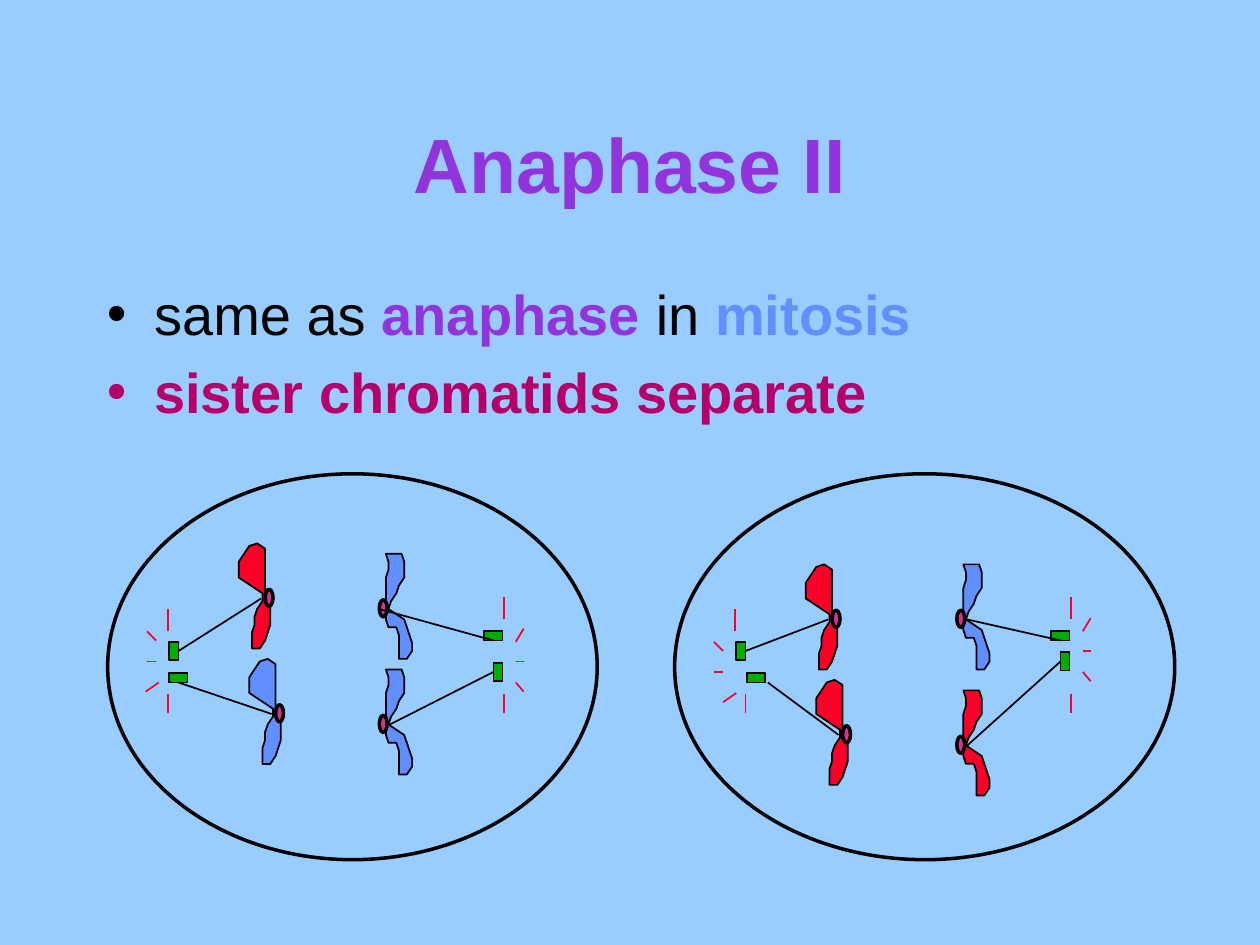
from lxml import etree
from pptx import Presentation
from pptx import util as u
from pptx.dml import color
from pptx.enum import shapes, text
from pptx.oxml import ns

PX = 9525
BLACK, RED, BLUE, GREEN = "000000", "FC0128", "618FFD", "00AE00"
PURPLE, PINK, WINE, SKY = "9234DB", "D93192", "B50069", "99CCFF"

LEFT = [
    (26, 42), (20, 40), (20, 34), (20, 28), (20, 22), (20, 16), (20, 10), (20, 4),
    (14, 0), (8, 2), (4, 8), (0, 14), (0, 20), (0, 26), (6, 30), (12, 34),
    (18, 38), (18, 44), (14, 50), (12, 56), (12, 62), (10, 68), (10, 74), (10, 80),
    (16, 80), (20, 74), (22, 68), (24, 62), (24, 56), (24, 50), (24, 44),
]
RIGHT = [
    (2, 42), (0, 36), (0, 30), (0, 24), (0, 18), (2, 12), (2, 6), (0, 0),
    (6, 0), (12, 0), (14, 6), (14, 12), (14, 18), (10, 24), (8, 30), (4, 36),
    (2, 42), (8, 46), (14, 50), (16, 56), (18, 62), (20, 68), (20, 74), (16, 80),
    (10, 80), (10, 74), (10, 68), (10, 62), (8, 56), (2, 56), (0, 50), (0, 44),
]


def rgb(code):
    return color.RGBColor.from_string(code)


def scale(*vals):
    return [v * PX for v in vals]


def apply(item, form):
    for key, val in form.items():
        setattr(item, key, val)


def paint(shape, fill, width):
    shape.shadow.inherit = False
    if fill:
        shape.fill.solid()
        shape.fill.fore_color.rgb = rgb(fill)
    else:
        shape.fill.background()
    shape.line.color.rgb = rgb(BLACK)
    shape.line.width = u.Pt(width)
    return shape


def block(slide, kind, box, fill, width=1):
    return paint(slide.shapes.add_shape(kind, *scale(*box)), fill, width)


def line(slide, start, end, tone):
    wire = slide.shapes.add_connector(
        shapes.MSO_CONNECTOR.STRAIGHT, *scale(*start, *end))
    wire.line.color.rgb = rgb(tone)
    wire.line.width = u.Pt(1)
    etree.SubElement(wire._element.spPr, ns.qn("a:effectLst"))
    return wire


def strand(slide, left, top, points, fill):
    spots = [(left + x, top + y) for x, y in points]
    pen = slide.shapes.build_freeform(*spots[0], scale=PX)
    pen.add_line_segments(spots[1:], close=True)
    paint(pen.convert_to_shape(), fill, 1)


def write(para, words, size, tone, bold):
    run = para.add_run()
    run.text = words
    apply(run.font, {"name": "Arial", "size": u.Pt(size), "bold": bold})
    run.font.color.rgb = rgb(tone)


def title(slide, box):
    head = slide.shapes.title
    apply(head, dict(zip(("left", "top", "width", "height"), scale(*box))))
    apply(head.text_frame, {"vertical_anchor": text.MSO_ANCHOR.MIDDLE, "word_wrap": True})
    para = head.text_frame.paragraphs[0]
    para.alignment = text.PP_ALIGN.CENTER
    write(para, "Anaphase II", 44, PURPLE, True)


def body(slide, box):
    frame = slide.shapes.add_textbox(*scale(*box)).text_frame
    frame.word_wrap = True
    rows = [
        [("same as ", BLACK, False), ("anaphase", PURPLE, True),
         (" in ", BLACK, False), ("mitosis", BLUE, True)],
        [("sister chromatids separate", WINE, True)],
    ]
    for num, row in enumerate(rows):
        para = frame.add_paragraph() if num else frame.paragraphs[0]
        para.space_before = u.Pt(6.4)
        props = para._p.get_or_add_pPr()
        props.set("marL", str(36 * PX))
        props.set("indent", str(-36 * PX))
        etree.SubElement(props, ns.qn("a:buFont")).set("typeface", "Arial")
        etree.SubElement(props, ns.qn("a:buChar")).set("char", "•")
        for words, tone, bold in row:
            write(para, words, 32, tone, bold)


def cell(slide, box, arms, slip):
    left, top = box[:2]
    kinds = shapes.MSO_SHAPE

    def at(x, y):
        return left + x, top + y

    for x, y, points, fill, tip in arms:
        strand(slide, *at(x, y), points, fill)
    block(slide, kinds.OVAL, box, None, 2)

    poles = [
        (47, 128, 7, 14, 3),
        (47 + slip, 152, 14, 7, None if slip else 2),
        (287, 120, 14, 7, 2),
        (294, 144 - slip, 7, 14, 1),
    ]
    rods = [block(slide, kinds.RECTANGLE, (*at(x, y), w, h), GREEN)
            for x, y, w, h, side in poles]

    rays = [
        (39 + slip, 159 + slip, 29 + slip, 166 + slip),
        (30, 143 + slip, 37, 143 + slip),
        (30, 120 + slip, 37, 127 + slip),
        (46, 120, 46, 103),
        (46 + slip, 168, 46 + slip, 182),
        (302, 111, 302, 94),
        (311, 128 - slip, 317, 118 - slip),
        (311, 143 - slip, 317, 143 - slip),
        (311, 159 - slip, 317, 166 - slip),
        (302, 168, 302, 182),
    ]
    for x, y, far, low in rays:
        line(slide, at(x, y), at(far, low), RED)

    for x, y, points, fill, tip in arms:
        knot = x + (20 if points is LEFT else -5)
        block(slide, kinds.OVAL, (*at(knot, y + 35), 6, 13), PINK, 2)

    for rod, pole, arm in zip(rods, poles, arms):
        x, y, points, fill, tip = arm
        wire = line(slide, at(71, 159), at(x + tip, y + 42), BLACK)
        if pole[4] is not None:
            wire.begin_connect(rod, pole[4])


def main():
    deck = Presentation()
    apply(deck, {"slide_width": 960 * PX, "slide_height": 720 * PX})
    slide = deck.slides.add_slide(deck.slide_layouts[5])
    slide.background.fill.solid()
    slide.background.fill.fore_color.rgb = rgb(SKY)
    title(slide, (72, 64, 816, 120))
    body(slide, (72, 208, 816, 432))
    cell(slide, (82, 361, 373, 294), [
        (100, 53, LEFT, RED, 17), (108, 141, LEFT, BLUE, 17),
        (212, 61, RIGHT, BLUE, -5), (212, 149, RIGHT, BLUE, 3)], 0)
    cell(slide, (514, 361, 381, 294), [
        (100, 69, LEFT, RED, 17), (108, 157, LEFT, RED, 17),
        (220, 69, RIGHT, BLUE, 3), (220, 165, RIGHT, RED, 3)], 8)
    deck.save("out.pptx")


if __name__ == "__main__":
    main()
